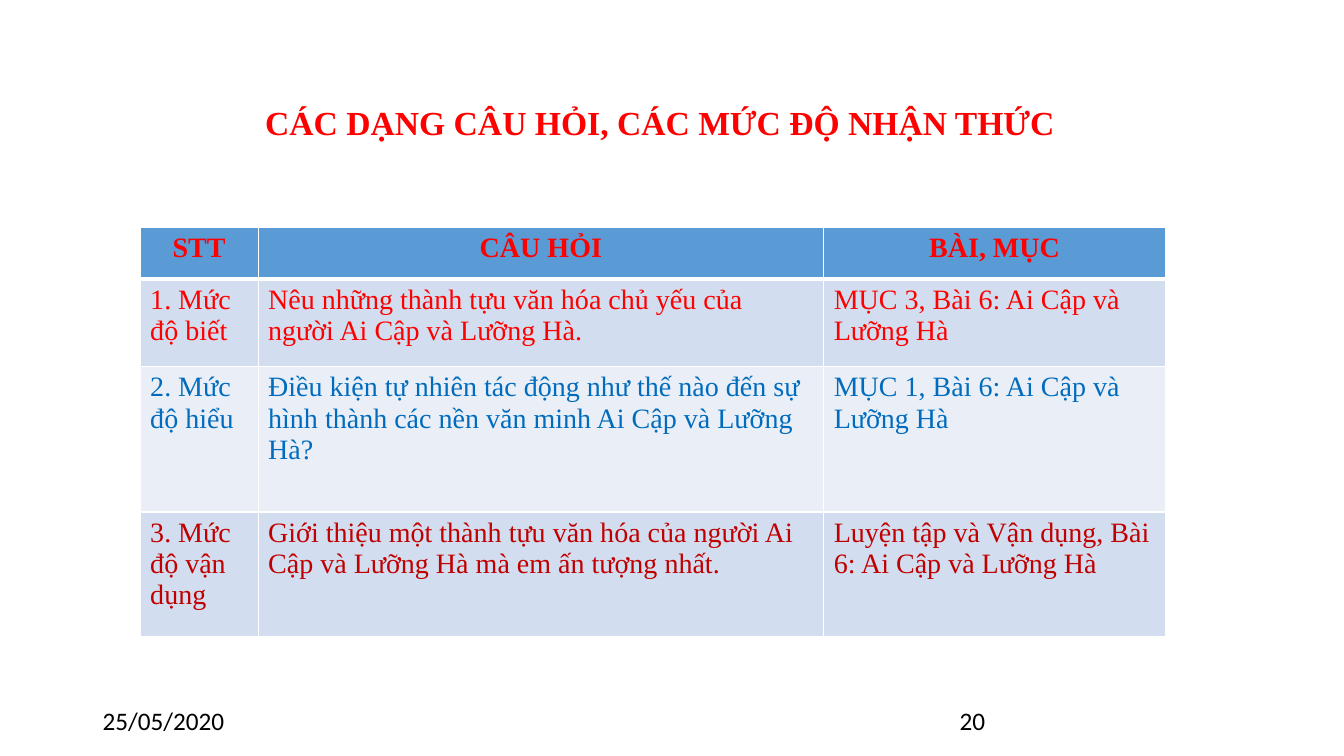
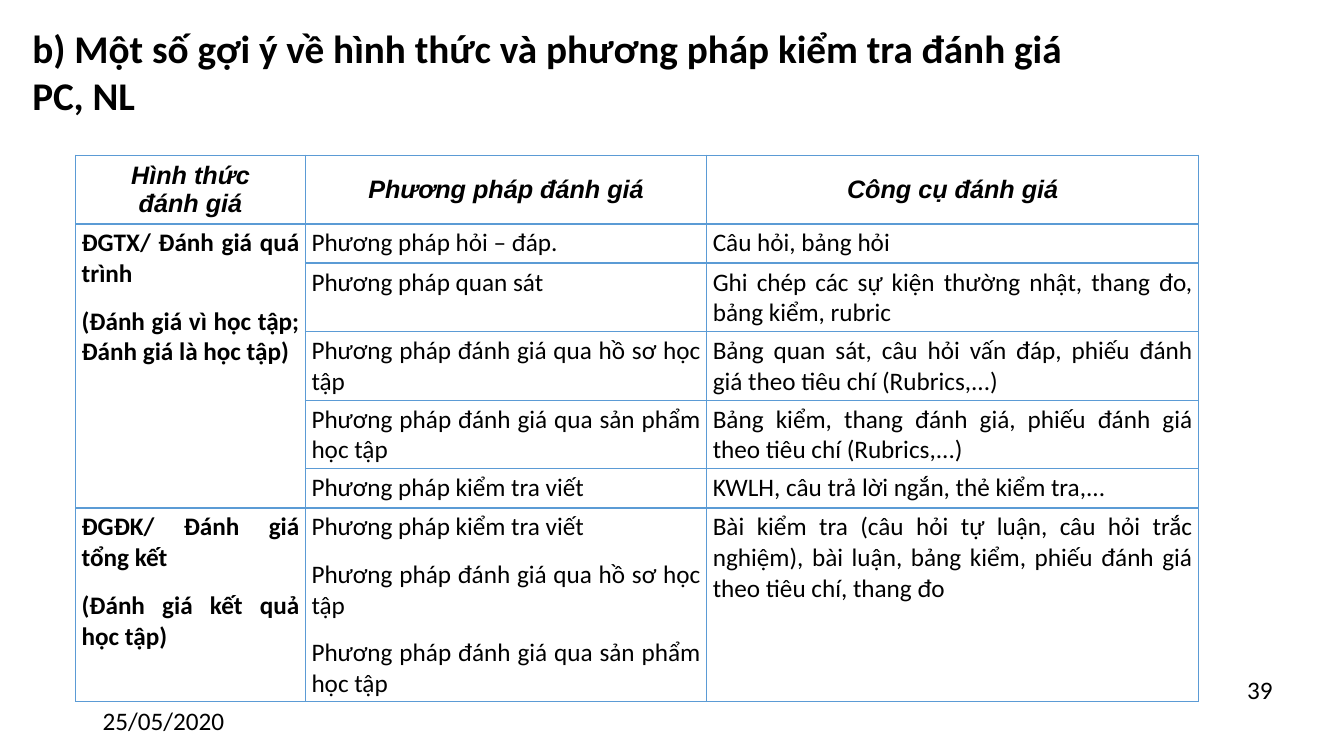
from lxml import etree
from pptx import Presentation
from pptx.dml.color import RGBColor
from pptx.enum.text import MSO_ANCHOR, MSO_AUTO_SIZE, PP_ALIGN
from pptx.oxml.ns import qn
from pptx.util import Emu, Pt

LEFT, CENTER, JUSTIFY = PP_ALIGN.LEFT, PP_ALIGN.CENTER, PP_ALIGN.JUSTIFY
TOP, MIDDLE = MSO_ANCHOR.TOP, MSO_ANCHOR.MIDDLE
NO_AUTOSIZE = MSO_AUTO_SIZE.NONE

EMU_PER_PX = 9144
SLIDE_SIZE = (1333, 750)
TITLE_ONLY = 5

BLACK = RGBColor(0x00, 0x00, 0x00)
WHITE = RGBColor(0xFF, 0xFF, 0xFF)
RED = RGBColor(0xFF, 0x00, 0x00)
DARK_RED = RGBColor(0xC0, 0x00, 0x00)
BLUE = RGBColor(0x01, 0x6C, 0xBD)
HEADER_BLUE = RGBColor(0x5B, 0x9B, 0xD5)
BAND_DARK = RGBColor(0xD2, 0xDE, 0xEF)
BAND_LIGHT = RGBColor(0xEA, 0xEF, 0xF7)

SERIF, SANS, HEADER_SANS = "Times New Roman", "Calibri", "Arial"

DATE = "25/05/2020"
DATE_BOX = (92, 695, 300, 40)

QUESTIONS = {
    "title": "CÁC DẠNG CÂU HỎI, CÁC MỨC ĐỘ NHẬN THỨC",
    "title_box": (253, 96, 818, 50),
    "title_format": dict(size=24, font=SERIF, color=RED, bold=True),
    "number": "20",
    "number_box": (942, 695, 300, 40),
    "origin": (139, 226),
    "columns": [117, 561, 339],
    "heights": [51, 87, 144, 124],
    "rows": [
        ("STT", "CÂU HỎI", "BÀI, MỤC"),
        ("1. Mức độ biết",
         "Nêu những thành tựu văn hóa chủ yếu của người Ai Cập và Lưỡng Hà.",
         "MỤC 3, Bài 6: Ai Cập và Lưỡng Hà"),
        ("2. Mức độ hiểu",
         "Điều kiện tự nhiên tác động như thế nào đến sự hình thành các nền "
         "văn minh Ai Cập và Lưỡng Hà?",
         "MỤC 1, Bài 6: Ai Cập và Lưỡng Hà"),
        ("3. Mức độ vận dụng",
         "Giới thiệu một thành tựu văn hóa của người Ai Cập và Lưỡng Hà mà em "
         "ấn tượng nhất.",
         "Luyện tập và Vận dụng, Bài 6: Ai Cập và Lưỡng Hà"),
    ],
    "merges": [],
    "margins": (10, 5),
    "border": WHITE,
    "header_line": 3,
    "fills": [HEADER_BLUE, BAND_DARK, BAND_LIGHT, BAND_DARK],
    "text_colors": [RED, RED, BLUE, DARK_RED],
    "header_format": dict(size=20, font=SERIF, bold=True, align=CENTER),
    "body_format": dict(size=20, font=SERIF),
    "bold_first_column": False,
}

METHODS = {
    "title": "b) Một số gợi ý về hình thức và phương pháp kiểm tra đánh giá PC, NL",
    "title_box": (22, 19, 1044, 104),
    "title_format": dict(size=28, bold=True),
    "number": "39",
    "number_box": (1227, 664, 57, 40),
    "origin": (75, 154),
    "columns": [228, 398, 488],
    "heights": [67, 39, 68, 68, 68, 39, 192],
    "rows": [
        ("Hình thức\nđánh giá", "Phương pháp đánh giá", "Công cụ đánh giá"),
        ("ĐGTX/ Đánh giá quá trình\n(Đánh giá vì học tập; Đánh giá là học tập)",
         "Phương pháp hỏi – đáp.", "Câu hỏi, bảng hỏi"),
        ("", "Phương pháp quan sát",
         "Ghi chép các sự kiện thường nhật, thang đo, bảng kiểm, rubric"),
        ("", "Phương pháp đánh giá qua hồ sơ học tập",
         "Bảng quan sát, câu hỏi vấn đáp, phiếu đánh giá theo tiêu chí (Rubrics,...)"),
        ("", "Phương pháp đánh giá qua sản phẩm học tập",
         "Bảng kiểm, thang đánh giá, phiếu đánh giá theo tiêu chí (Rubrics,...)"),
        ("", "Phương pháp kiểm tra viết", "KWLH, câu trả lời ngắn, thẻ kiểm tra,..."),
        ("ĐGĐK/ Đánh giá tổng kết\n(Đánh giá kết quả học tập)",
         "Phương pháp kiểm tra viết\nPhương pháp đánh giá qua hồ sơ học tập\n"
         "Phương pháp đánh giá qua sản phẩm học tập",
         "Bài kiểm tra (câu hỏi tự luận, câu hỏi trắc nghiệm), bài luận, bảng kiểm, "
         "phiếu đánh giá theo tiêu chí, thang đo"),
    ],
    "merges": [((1, 0), (5, 0))],
    "margins": (6, 4),
    "border": HEADER_BLUE,
    "header_line": 2,
    "fills": [WHITE] * 7,
    "text_colors": [BLACK] * 7,
    "header_format": dict(size=18, font=HEADER_SANS, bold=True, italic=True,
                          align=CENTER, anchor=MIDDLE),
    "body_format": dict(size=18, align=JUSTIFY, gap=12),
    "bold_first_column": True,
}


def px(value):
    return Emu(value * EMU_PER_PX)


def write_text(frame, text, size=18, font=SANS, color=BLACK, bold=False,
               italic=False, align=LEFT, anchor=TOP, gap=0):
    frame.word_wrap = True
    frame.vertical_anchor = anchor
    for index, line in enumerate(text.split("\n")):
        paragraph = frame.add_paragraph() if index else frame.paragraphs[0]
        paragraph.alignment = align
        paragraph.space_before = Pt(gap if index else 0)
        run = paragraph.add_run()
        run.text = line
        run.font.size = Pt(size)
        run.font.name = font
        run.font.bold = bold
        run.font.italic = italic
        run.font.color.rgb = color


def add_text_box(slide, box, text):
    shape = slide.shapes.add_textbox(*map(px, box))
    write_text(shape.text_frame, text)


def add_title(slide, content):
    title = slide.shapes.title
    title.left, title.top, title.width, title.height = map(px, content["title_box"])
    title.text_frame.auto_size = NO_AUTOSIZE
    write_text(title.text_frame, content["title"], **content["title_format"])


def set_borders(cell, color, widths):
    properties = cell._tc.get_or_add_tcPr()
    for side, width in widths.items():
        line = etree.SubElement(properties, qn(f"a:ln{side}"), w=str(Pt(width)))
        fill = etree.SubElement(line, qn("a:solidFill"))
        etree.SubElement(fill, qn("a:srgbClr"), val=str(color))


def add_grid(slide, content):
    rows, columns, heights = content["rows"], content["columns"], content["heights"]
    size = (sum(columns), sum(heights))
    frame = slide.shapes.add_table(len(rows), len(columns),
                                   *map(px, content["origin"] + size))
    table = frame.table
    table.first_row = table.horz_banding = False
    for column, width in zip(table.columns, columns):
        column.width = px(width)
    for row, height in zip(table.rows, heights):
        row.height = px(height)
    for start, end in content["merges"]:
        table.cell(*start).merge(table.cell(*end))

    side_margin, edge_margin = map(px, content["margins"])
    for row_index, texts in enumerate(rows):
        top = content["header_line"] if row_index == 1 else 1
        bottom = content["header_line"] if row_index == 0 else 1
        for column_index, text in enumerate(texts):
            cell = table.cell(row_index, column_index)
            cell.margin_left = cell.margin_right = side_margin
            cell.margin_top = cell.margin_bottom = edge_margin
            set_borders(cell, content["border"],
                        {"L": 1, "R": 1, "T": top, "B": bottom})
            cell.fill.solid()
            cell.fill.fore_color.rgb = content["fills"][row_index]
            if not text:
                continue
            style = dict(content["body_format" if row_index else "header_format"])
            style["color"] = content["text_colors"][row_index]
            if row_index and column_index == 0:
                style["bold"] = content["bold_first_column"]
            cell.vertical_anchor = style.pop("anchor", TOP)
            write_text(cell.text_frame, text, anchor=None, **style)


def add_content_slide(presentation, content):
    slide = presentation.slides.add_slide(presentation.slide_layouts[TITLE_ONLY])
    add_title(slide, content)
    add_text_box(slide, DATE_BOX, DATE)
    add_text_box(slide, content["number_box"], content["number"])
    add_grid(slide, content)


def main():
    presentation = Presentation()
    presentation.slide_width, presentation.slide_height = map(px, SLIDE_SIZE)
    for content in (QUESTIONS, METHODS):
        add_content_slide(presentation, content)
    presentation.save("out.pptx")


if __name__ == "__main__":
    main()
